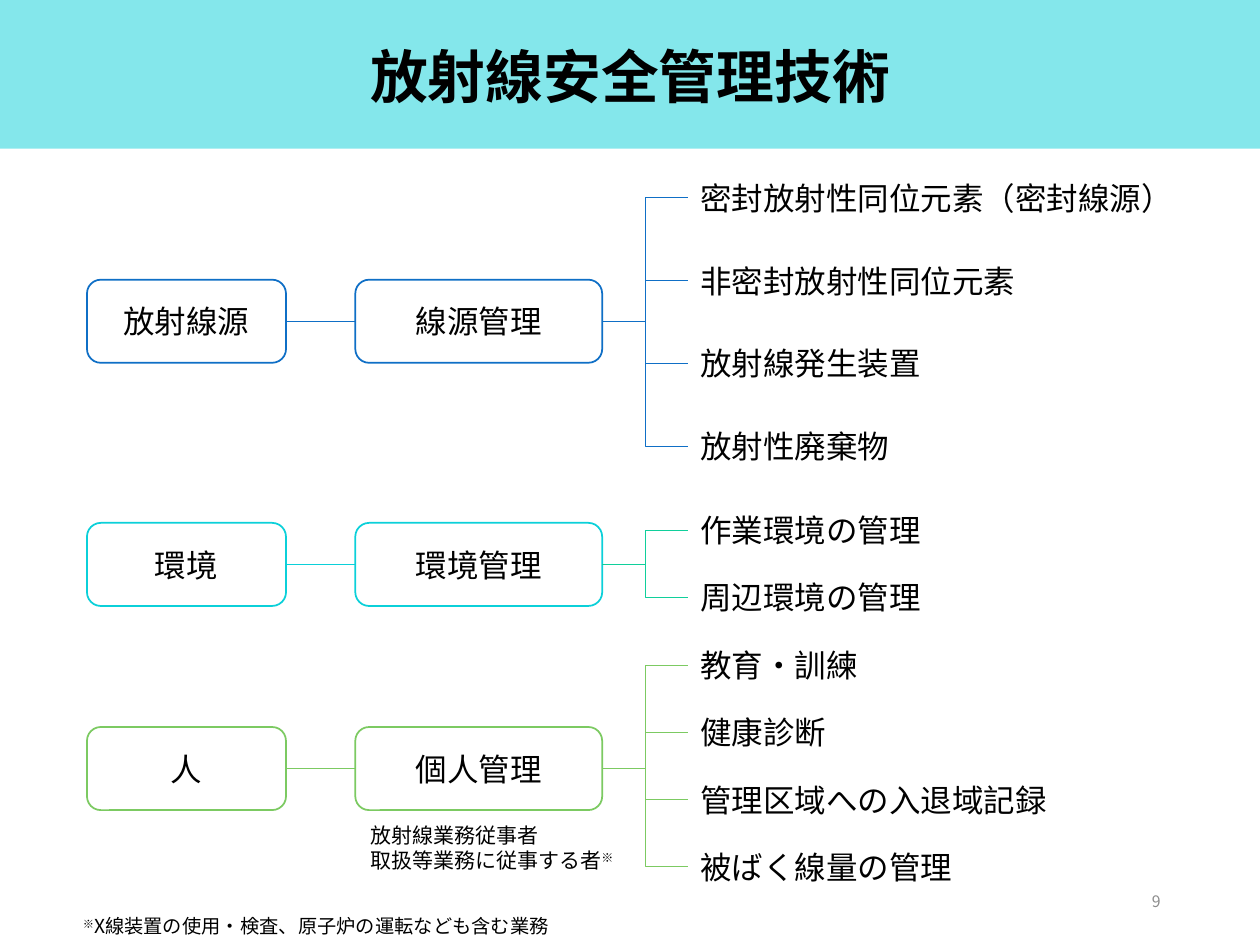
"""Build the radiation safety management overview slide."""
from dataclasses import dataclass

from lxml import etree
from pptx import Presentation
from pptx.dml.color import RGBColor
from pptx.enum.shapes import MSO_CONNECTOR, MSO_SHAPE
from pptx.enum.text import MSO_ANCHOR, MSO_AUTO_SIZE, PP_ALIGN
from pptx.oxml.ns import qn
from pptx.util import Inches, Pt

RECTANGLE, ROUNDED = MSO_SHAPE.RECTANGLE, MSO_SHAPE.ROUNDED_RECTANGLE
STRAIGHT, ELBOW = MSO_CONNECTOR.STRAIGHT, MSO_CONNECTOR.ELBOW
LEFT, CENTER, RIGHT = PP_ALIGN.LEFT, PP_ALIGN.CENTER, PP_ALIGN.RIGHT
TOP, MIDDLE = MSO_ANCHOR.TOP, MSO_ANCHOR.MIDDLE
FIT_SHAPE = MSO_AUTO_SIZE.SHAPE_TO_FIT_TEXT
LEFT_SIDE, RIGHT_SIDE = 1, 3


@dataclass(frozen=True)
class Theme:
    font: str = "Noto Sans CJK JP"
    text: str = "000000"
    muted: str = "8C8C8C"
    white: str = "FFFFFF"
    blue: str = "0F6FC6"
    cyan: str = "0BD0D9"
    teal: str = "10CF9B"
    green: str = "7CCA62"
    title_size: float = 33
    body_size: float = 18
    note_size: float = 12
    footnote_size: float = 11
    number_size: float = 9
    box_line: float = 1
    link_line: float = 0.5


@dataclass(frozen=True)
class Piece:
    text: str
    superscript: bool = False


@dataclass(frozen=True)
class Branch:
    target: str
    control: str
    color: str
    leaf_color: str
    center: float
    first_leaf: float
    last_leaf: float
    leaves: tuple[str, ...]


THEME = Theme()
TARGET_LEFT, TARGET_WIDTH = 0.69, 1.58
CONTROL_LEFT, CONTROL_WIDTH = 2.82, 1.96
BOX_HEIGHT = 0.66
LEAF_LEFT, LEAF_HEIGHT = 5.46, 0.4
CHARACTER_WIDTH, LEAF_PADDING = 0.25, 0.22

BRANCHES = (
    Branch("放射線源", "線源管理", THEME.blue, THEME.blue, 2.55, 1.57, 3.54,
           ("密封放射性同位元素（密封線源）", "非密封放射性同位元素",
            "放射線発生装置", "放射性廃棄物")),
    Branch("環境", "環境管理", THEME.cyan, THEME.teal, 4.48, 4.21, 4.74,
           ("作業環境の管理", "周辺環境の管理")),
    Branch("人", "個人管理", THEME.green, THEME.green, 6.1, 5.28, 6.88,
           ("教育・訓練", "健康診断", "管理区域への入退域記録", "被ばく線量の管理")),
)


def write(shape, paragraphs: list[list[Piece]], size: float, color: str = THEME.text,
          align=LEFT, anchor=TOP, bold: bool = False) -> None:
    """Write styled paragraphs into a shape, run by run."""
    frame = shape.text_frame
    frame.vertical_anchor = anchor
    for index, pieces in enumerate(paragraphs):
        paragraph = frame.add_paragraph() if index else frame.paragraphs[0]
        paragraph.alignment = align
        for piece in pieces:
            run = paragraph.add_run()
            run.text = piece.text
            run.font.size = Pt(size)
            run.font.bold = bold
            run.font.color.rgb = RGBColor.from_string(color)
            run.font.name = THEME.font
            properties = run._r.get_or_add_rPr()
            etree.SubElement(properties, qn("a:ea"), typeface=THEME.font)
            if piece.superscript:
                properties.set("baseline", "30000")


def add_box(slide, text: str, left: float, width: float, branch: Branch):
    """Draw an outlined rounded box centred on its branch."""
    shape = slide.shapes.add_shape(ROUNDED, Inches(left), Inches(branch.center - BOX_HEIGHT / 2),
                                   Inches(width), Inches(BOX_HEIGHT))
    shape.shadow.inherit = False
    shape.fill.solid()
    shape.fill.fore_color.rgb = RGBColor.from_string(THEME.white)
    shape.line.color.rgb = RGBColor.from_string(branch.color)
    shape.line.width = Pt(THEME.box_line)
    write(shape, [[Piece(text)]], THEME.body_size, align=CENTER, anchor=MIDDLE)
    return shape


def add_label(slide, paragraphs: list[list[Piece]], left: float, top: float,
              width: float, height: float, size: float):
    """Add an unwrapped text box that fits its text."""
    label = slide.shapes.add_textbox(Inches(left), Inches(top), Inches(width), Inches(height))
    label.text_frame.word_wrap = False
    label.text_frame.auto_size = FIT_SHAPE
    write(label, paragraphs, size)
    return label


def link(slide, start, end, kind, color: str) -> None:
    """Join the right side of one shape to the left side of another."""
    connector = slide.shapes.add_connector(kind, 0, 0, 0, 0)
    connector.begin_connect(start, RIGHT_SIDE)
    connector.end_connect(end, LEFT_SIDE)
    connector.line.color.rgb = RGBColor.from_string(color)
    connector.line.width = Pt(THEME.link_line)
    etree.SubElement(connector._element.spPr, qn("a:effectLst"))


def add_branch(slide, branch: Branch) -> None:
    """Draw a target, its control and the evenly spaced leaves."""
    target = add_box(slide, branch.target, TARGET_LEFT, TARGET_WIDTH, branch)
    control = add_box(slide, branch.control, CONTROL_LEFT, CONTROL_WIDTH, branch)
    link(slide, target, control, STRAIGHT, branch.color)
    step = (branch.last_leaf - branch.first_leaf) / (len(branch.leaves) - 1)
    for index, text in enumerate(branch.leaves):
        top = branch.first_leaf + index * step - LEAF_HEIGHT / 2
        width = len(text) * CHARACTER_WIDTH + LEAF_PADDING
        leaf = add_label(slide, [[Piece(text)]], LEAF_LEFT, top, width, LEAF_HEIGHT,
                         THEME.body_size)
        link(slide, control, leaf, ELBOW, branch.leaf_color)


def add_header(slide) -> None:
    """Place the title over a half-transparent band."""
    band = slide.shapes.add_shape(RECTANGLE, 0, 0, Inches(10), Inches(1.18))
    band.shadow.inherit = False
    band.fill.solid()
    band.fill.fore_color.rgb = RGBColor.from_string(THEME.cyan)
    band.line.fill.background()
    color = band._element.spPr.find(qn("a:solidFill")).find(qn("a:srgbClr"))
    etree.SubElement(color, qn("a:alpha"), val="50000")
    title = slide.shapes.title
    title._element.addprevious(band._element)
    title.left, title.top = Inches(0.69), Inches(0.21)
    title.width, title.height = Inches(8.62), Inches(0.85)
    write(title, [[Piece("放射線安全管理技術")]], THEME.title_size, align=CENTER,
          anchor=MIDDLE, bold=True)
    title.text_frame.paragraphs[0].line_spacing = 0.9


def main() -> None:
    """Build and save the presentation."""
    presentation = Presentation()
    presentation.slide_width, presentation.slide_height = Inches(10), Inches(7.5)
    slide = presentation.slides.add_slide(presentation.slide_layouts[5])
    add_header(slide)
    for branch in BRANCHES:
        add_branch(slide, branch)
    mark = Piece("※", superscript=True)
    add_label(slide, [[Piece("放射線業務従事者")], [Piece("取扱等業務に従事する者"), mark]],
              2.84, 6.48, 2.22, 0.5, THEME.note_size)
    add_label(slide, [[mark, Piece("X線装置の使用・検査、原子炉の運転なども含む業務")]],
              0.56, 7.21, 3.95, 0.29, THEME.footnote_size)
    number = slide.shapes.add_textbox(Inches(7.06), Inches(6.95), Inches(2.25), Inches(0.4))
    number.text_frame.word_wrap = True
    write(number, [[Piece("9")]], THEME.number_size, THEME.muted, RIGHT, MIDDLE)
    presentation.save("out.pptx")


if __name__ == "__main__":
    main()
